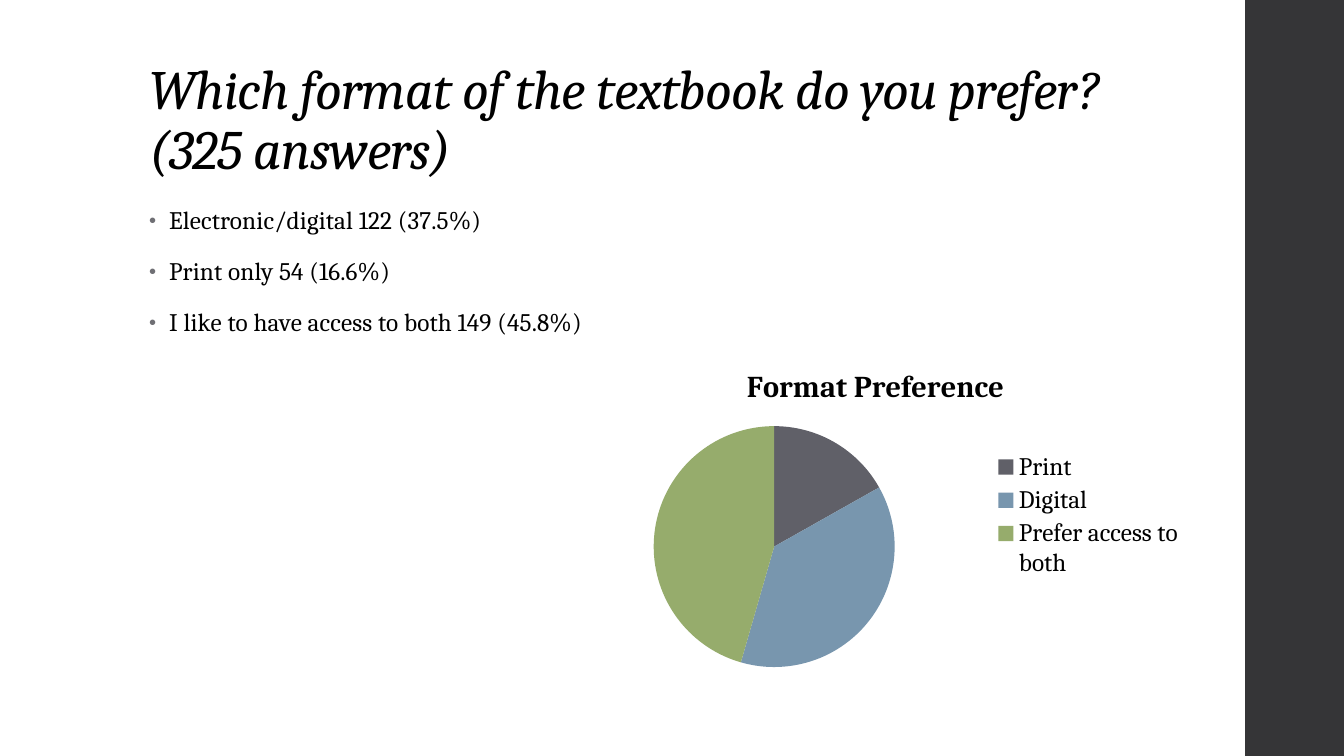
from pptx import Presentation
from pptx.chart.data import CategoryChartData
from pptx.dml.color import RGBColor
from pptx.enum.chart import XL_CHART_TYPE, XL_LEGEND_POSITION
from pptx.enum.shapes import MSO_SHAPE
from pptx.enum.text import MSO_ANCHOR, MSO_AUTO_SIZE, PP_ALIGN
from pptx.oxml import parse_xml
from pptx.oxml.ns import nsdecls, qn
from pptx.util import Inches, Pt

FONT = "Cambria"
BLACK = RGBColor(0x00, 0x00, 0x00)
STRIP = RGBColor(0x35, 0x35, 0x37)
BULLET = RGBColor(0x6F, 0x6F, 0x74)
SLICES = {
    "Print": (17, RGBColor(0x60, 0x60, 0x68)),
    "Digital": (38, RGBColor(0x78, 0x96, 0xAE)),
    "Prefer access to both": (46, RGBColor(0x96, 0xAC, 0x6C)),
}
ANSWERS = [
    "Electronic/digital 122 (37.5%)",
    "Print only 54 (16.6%)",
    "I like to have access to both 149 (45.8%)",
]


def set_font(font, size, bold=False, italic=False):
    font.name = FONT
    font.size = Pt(size)
    font.bold = bold
    font.italic = italic
    font.color.rgb = BLACK


def set_letter_spacing(paragraph, hundredths):
    properties = paragraph._p.get_or_add_pPr()
    properties.find(qn("a:defRPr")).set("spc", str(hundredths))


def add_bullet(paragraph):
    properties = paragraph._p.get_or_add_pPr()
    properties.set("marL", str(Inches(0.2)))
    properties.set("indent", str(Inches(-0.2)))
    font_properties = properties.find(qn("a:defRPr"))
    for xml in (
        f'<a:buClr {nsdecls("a")}><a:srgbClr val="{BULLET}"/></a:buClr>',
        f'<a:buSzPct {nsdecls("a")} val="80000"/>',
        f'<a:buFont {nsdecls("a")} typeface="Arial"/>',
        f'<a:buChar {nsdecls("a")} char="•"/>',
    ):
        font_properties.addprevious(parse_xml(xml))


def add_strip(slide):
    strip = slide.shapes.add_shape(
        MSO_SHAPE.RECTANGLE, Inches(12.35), 0, Inches(1), Inches(7.5))
    strip.shadow.inherit = False
    strip.fill.solid()
    strip.fill.fore_color.rgb = STRIP
    strip.line.fill.background()


def format_title(slide, text):
    title = slide.shapes.title
    title.left, title.top = Inches(1.38), Inches(0.41)
    title.width, title.height = Inches(10.6), Inches(1.44)
    frame = title.text_frame
    frame.text = text
    frame.word_wrap = True
    frame.auto_size = MSO_AUTO_SIZE.NONE
    frame.vertical_anchor = MSO_ANCHOR.BOTTOM
    paragraph = frame.paragraphs[0]
    paragraph.alignment = PP_ALIGN.LEFT
    paragraph.line_spacing = 0.9
    set_font(paragraph.font, 39.6, italic=True)
    set_letter_spacing(paragraph, -50)


def add_bullet_list(slide, lines):
    box = slide.shapes.add_textbox(
        Inches(1.38), Inches(2), Inches(9.4), Inches(4.76))
    frame = box.text_frame
    frame.word_wrap = True
    frame.text = "\n".join(lines)
    for paragraph in frame.paragraphs:
        paragraph.line_spacing = 0.95
        paragraph.space_before = Pt(14)
        paragraph.space_after = Pt(2)
        set_font(paragraph.font, 18)
        set_letter_spacing(paragraph, 10)
        add_bullet(paragraph)


def make_layout(x, y, width, height, inner=False):
    target = '<c:layoutTarget val="inner"/>' if inner else ""
    return parse_xml(
        f'<c:layout {nsdecls("c")}><c:manualLayout>{target}'
        '<c:xMode val="edge"/><c:yMode val="edge"/>'
        f'<c:x val="{x}"/><c:y val="{y}"/><c:w val="{width}"/><c:h val="{height}"/>'
        '</c:manualLayout></c:layout>')


def place_part(part, index, layout):
    for old_layout in part.findall(qn("c:layout")):
        part.remove(old_layout)
    part.insert(index, layout)


def add_pie(slide, name, slices):
    data = CategoryChartData()
    data.categories = list(slices)
    data.add_series(name, [value for value, color in slices.values()])
    chart = slide.shapes.add_chart(
        XL_CHART_TYPE.PIE, Inches(5.54), Inches(3.46),
        Inches(6.29), Inches(3.3), data).chart
    set_font(chart.font, 18)

    # Chart title
    chart.has_title = True
    chart.chart_title.include_in_layout = False
    chart.chart_title.text_frame.text = name
    set_font(chart.chart_title.text_frame.paragraphs[0].font, 21.6, bold=True)

    # Legend
    chart.has_legend = True
    chart.legend.position = XL_LEGEND_POSITION.RIGHT
    chart.legend.include_in_layout = False
    set_font(chart.legend.font, 18)

    # Slices
    plot = chart.plots[0]
    plot.vary_by_categories = True
    for index, (value, color) in enumerate(slices.values()):
        fill = plot.series[0].points[index].format.fill
        fill.solid()
        fill.fore_color.rgb = color

    # Places of the pie and the legend within the chart
    plot_area = chart._chartSpace.chart.plotArea
    place_part(plot_area, 0, make_layout(0.15, 0.23, 0.38, 0.73, inner=True))
    place_part(chart.legend._element, 1, make_layout(0.68, 0.3, 0.31, 0.4))


def main():
    presentation = Presentation()
    presentation.slide_width = Inches(13.33)
    presentation.slide_height = Inches(7.5)
    slide = presentation.slides.add_slide(presentation.slide_layouts[5])

    add_strip(slide)
    format_title(
        slide, "Which format of the textbook do you prefer? (325 answers)")
    add_bullet_list(slide, ANSWERS)
    add_pie(slide, "Format Preference", SLICES)

    presentation.save("out.pptx")


if __name__ == "__main__":
    main()
